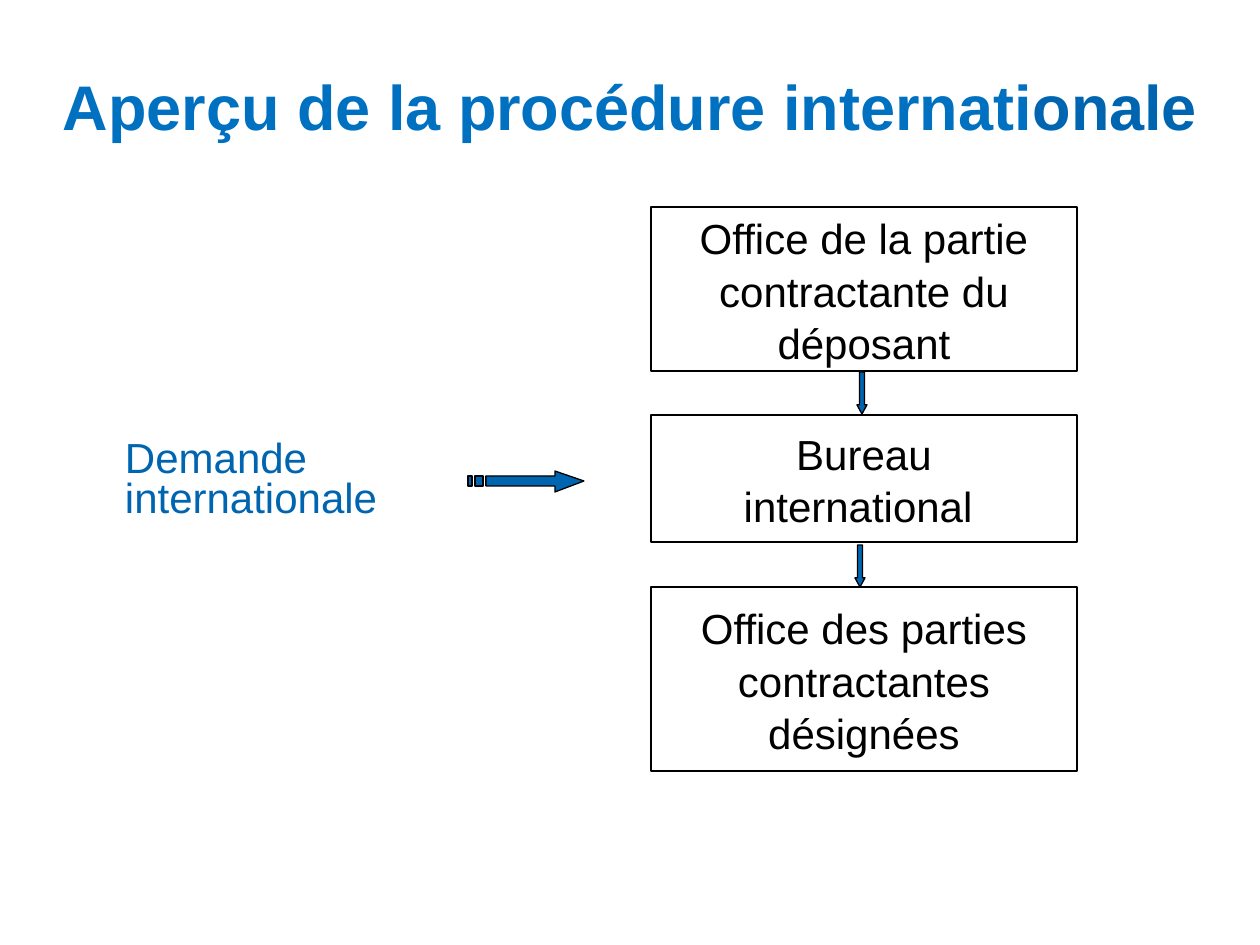
from dataclasses import dataclass

from pptx import Presentation, util as u
from pptx.dml.color import RGBColor
from pptx.enum import shapes, text

PX = 914400 / 126


@dataclass
class Theme:
    font: str = "Arial"
    title: RGBColor = RGBColor(0x00, 0x70, 0xC0)
    accent: RGBColor = RGBColor(0x00, 0x65, 0xB0)
    ink: RGBColor = RGBColor(0x00, 0x00, 0x00)
    title_size: int = 36
    body_size: int = 24


theme = Theme()


def px(*lengths):
    return [u.Emu(round(n * PX)) for n in lengths]


def write(tf, paragraphs, size=theme.body_size, color=theme.ink, bold=False,
          align=text.PP_ALIGN.CENTER, spacing=1.05, wrap=True, inset=13):
    """Fill a text frame; a run is a string or a (string, colour) pair."""
    tf.word_wrap = wrap
    tf.auto_size = text.MSO_AUTO_SIZE.NONE
    tf.vertical_anchor = text.MSO_ANCHOR.MIDDLE
    tf.margin_left, tf.margin_right = px(inset, inset)
    tf.margin_top, tf.margin_bottom = px(6, 6)
    for i, runs in enumerate(paragraphs):
        p = tf.add_paragraph() if i else tf.paragraphs[0]
        p.alignment, p.line_spacing = align, spacing
        for run in runs:
            words, run_color = run if isinstance(run, tuple) else (run, color)
            r = p.add_run()
            r.text = words
            r.font.name, r.font.size, r.font.bold = theme.font, u.Pt(size), bold
            r.font.color.rgb = run_color


prs = Presentation()
prs.slide_width, prs.slide_height = px(1260, 945)
s = prs.slides.add_slide(prs.slide_layouts[5])

title = s.shapes.title
title.left, title.top, title.width, title.height = px(0, 62, 1260, 86)
write(title.text_frame, [["Aperçu de la procédure internati", ("onale", theme.accent)]],
      size=theme.title_size, color=theme.title, bold=True, spacing=1)

request = s.shapes.add_textbox(*px(112, 435, 280, 93))
write(request.text_frame, [["Demande"], ["internationale"]], color=theme.accent,
      align=text.PP_ALIGN.LEFT, spacing=0.8, wrap=False)

offices = [
    ("Office de la partie contractante du déposant", 207, 164, 1),
    ("Bureau international ", 415, 127, 0.75),
    ("Office des parties contractantes désignées", 587, 184, 0.75),
]
for words, top, height, line in offices:
    sp = s.shapes.add_shape(shapes.MSO_SHAPE.RECTANGLE, *px(651, top, 426, height))
    sp.shadow.inherit = False
    sp.fill.background()
    sp.line.color.rgb, sp.line.width = theme.ink, u.Pt(line)
    write(sp.text_frame, [[words]], inset=41)

arrows = []
for left, top in [(857, 372), (855, 545)]:
    sp = s.shapes.add_shape(shapes.MSO_SHAPE.DOWN_ARROW, *px(left, top, 10, 42))
    sp.adjustments[0], sp.adjustments[1] = 0.5, 0.92
    arrows.append(sp)

# Striped arrow: one head with its shaft, then two stripes behind it
fb = s.shapes.build_freeform(555, 471, scale=PX)
fb.add_line_segments([(555, 476), (486, 476), (486, 486), (555, 486),
                      (555, 492), (584, 481)])
for left, right in [(475, 483), (468, 472)]:
    fb.move_to(left, 476)
    fb.add_line_segments([(left, 486), (right, 486), (right, 476)])
arrows.append(fb.convert_to_shape())

for sp in arrows:
    sp.shadow.inherit = False
    sp.fill.solid()
    sp.fill.fore_color.rgb = theme.accent
    sp.line.color.rgb, sp.line.width = theme.ink, u.Pt(0.75)

prs.save("out.pptx")
